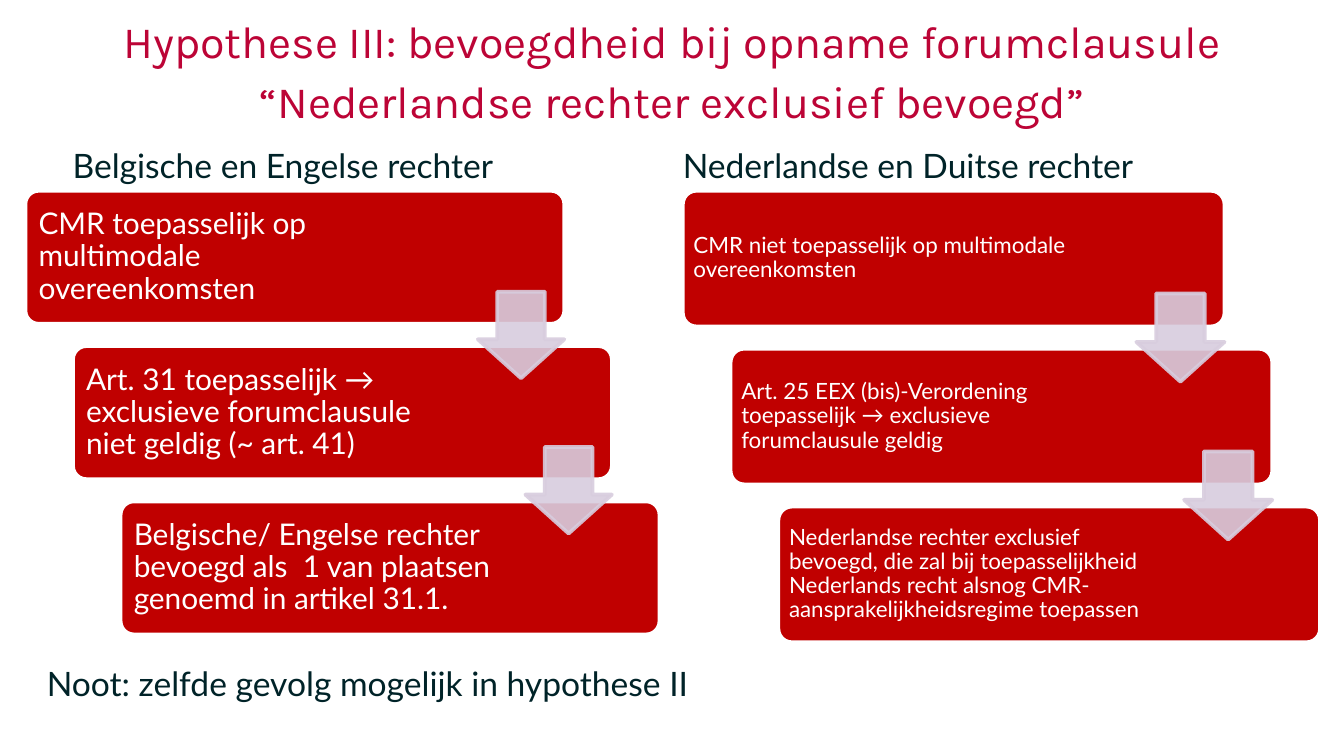
from lxml import etree
from pptx import Presentation
from pptx.dml.color import RGBColor
from pptx.enum import shapes, text
from pptx.oxml.ns import qn
from pptx.util import Pt

TITLE = ("Hypothese III: bevoegdheid bij opname forumclausule "
         "“Nederlandse rechter exclusief bevoegd”")
NOTE = "Noot: zelfde gevolg mogelijk in hypothese II"
STAIRCASES = [
    {
        "heading": "Belgische en Engelse rechter",
        "heading_left": 38.9, "left": 13.6, "width": 288.7, "height": 71.3,
        "step_x": 25.5, "step_y": 83.2, "size": 16, "inset": 5,
        "steps": [
            "CMR toepasselijk op multimodale overeenkomsten",
            "Art. 31 toepasselijk → exclusieve forumclausule niet geldig (~ art. 41)",
            "Belgische/ Engelse rechter bevoegd als  1 van plaatsen genoemd in artikel 31.1.",
        ],
    },
    {
        "heading": "Nederlandse en Duitse rechter",
        "heading_left": 365.8, "left": 365.8, "width": 290.2, "height": 72.7,
        "step_x": 25.6, "step_y": 84.6, "size": 12, "inset": 3.6,
        "steps": [
            "CMR niet toepasselijk op multimodale overeenkomsten",
            "Art. 25 EEX (bis)-Verordening toepasselijk → exclusieve forumclausule geldig",
            "Nederlandse rechter exclusief bevoegd, die zal bij toepasselijkheid "
            "Nederlands recht alsnog CMR-aansprakelijkheidsregime toepassen",
        ],
    },
]
COLOURS = {"title": "BC0436", "body": "002328", "step": "C00000",
           "white": "FFFFFF", "arrow": "D8CDDE"}
STAIR_TOP = 102.2
RIGHT_INSET = 77
ARROW_RATIO = 0.65


def colour(name):
    return RGBColor.from_string(COLOURS[name])


def write(shape, words, size, ink, font="Lato", spacing=None,
          align=text.PP_ALIGN.LEFT, anchor=text.MSO_ANCHOR.TOP, insets=(0, 0, 0, 0)):
    """Fill a shape with one paragraph; insets run left, top, right, bottom."""
    frame = shape.text_frame
    frame.text = words
    left, top, right, bottom = map(Pt, insets)
    frame_format = {"word_wrap": True, "auto_size": text.MSO_AUTO_SIZE.NONE,
                    "vertical_anchor": anchor, "margin_left": left, "margin_top": top,
                    "margin_right": right, "margin_bottom": bottom}
    for key, value in frame_format.items():
        setattr(frame, key, value)
    paragraph = frame.paragraphs[0]
    paragraph_format = {"alignment": align, "line_spacing": spacing, "space_before": Pt(0)}
    for key, value in paragraph_format.items():
        setattr(paragraph, key, value)
    for key, value in {"name": font, "size": Pt(size), "bold": False}.items():
        setattr(paragraph.runs[0].font, key, value)
    paragraph.runs[0].font.color.rgb = colour(ink)


def add_block(slide, preset, box, fill, line, adjustments):
    block = slide.shapes.add_shape(preset, *map(Pt, box))
    block.shadow.inherit = False
    block.fill.solid()
    block.fill.fore_color.rgb = colour(fill)
    block.line.color.rgb = colour(line)
    block.line.width = Pt(2)
    for index, value in enumerate(adjustments):
        block.adjustments[index] = value
    return block


def add_staircase(slide, stair):
    heading = slide.shapes.add_textbox(*map(Pt, (stair["heading_left"], 76.3, 315, 25.2)))
    write(heading, stair["heading"], 18, "body", spacing=Pt(23))

    width, height, inset = stair["width"], stair["height"], stair["inset"]
    corners = [(stair["left"] + i * stair["step_x"], STAIR_TOP + i * stair["step_y"])
               for i in range(len(stair["steps"]))]
    for (left, top), words in zip(corners, stair["steps"]):
        step = add_block(slide, shapes.MSO_SHAPE.ROUNDED_RECTANGLE,
                         (left, top, width, height), "step", "white", [0.1])
        write(step, words, stair["size"], "white", spacing=0.9,
              anchor=text.MSO_ANCHOR.MIDDLE, insets=(inset, inset, RIGHT_INSET, inset))

    # Each arrow is centred on the gap below a step, flush with its right side
    side = ARROW_RATIO * height
    for left, top in corners[:-1]:
        gap_middle = top + (height + stair["step_y"]) / 2
        arrow = add_block(slide, shapes.MSO_SHAPE.DOWN_ARROW,
                          (left + width - side, gap_middle - side / 2, side, side),
                          "arrow", "arrow", [0.55, 0.45])
        for paint in arrow._element.spPr.iter(qn("a:srgbClr")):
            etree.SubElement(paint, qn("a:alpha"), val="90000")


def main():
    deck = Presentation()
    deck.slide_width, deck.slide_height = Pt(720), Pt(405)
    slide = deck.slides.add_slide(deck.slide_layouts[5])

    title = slide.shapes.title
    title_box = {"left": 18, "top": 4.3, "width": 684, "height": 45.4}
    for key, value in title_box.items():
        setattr(title, key, Pt(value))
    write(title, TITLE, 24, "title", font="Karla", spacing=Pt(32),
          align=text.PP_ALIGN.CENTER)

    for stair in STAIRCASES:
        add_staircase(slide, stair)

    note = slide.shapes.add_textbox(*map(Pt, (18, 351.4, 411, 29)))
    write(note, NOTE, 18, "body", insets=(7.2, 3.6, 7.2, 3.6))
    deck.save("out.pptx")


if __name__ == "__main__":
    main()
